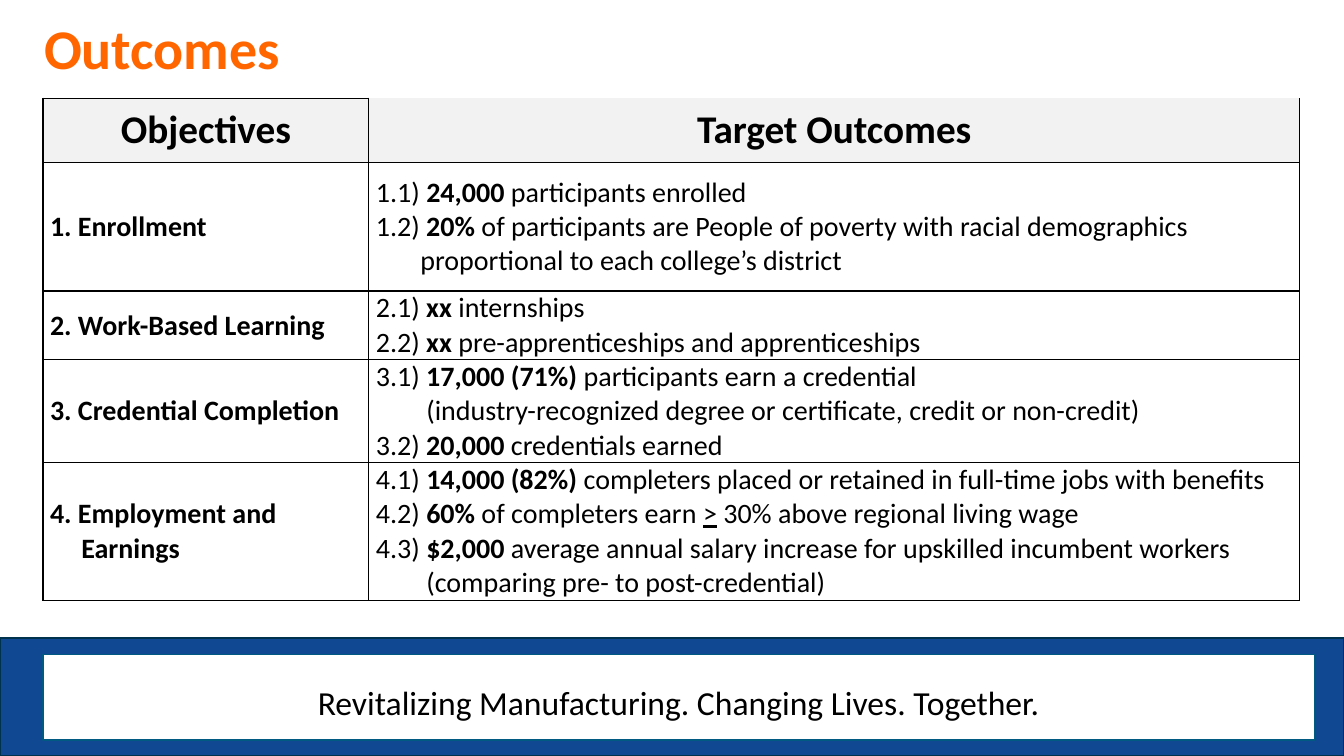
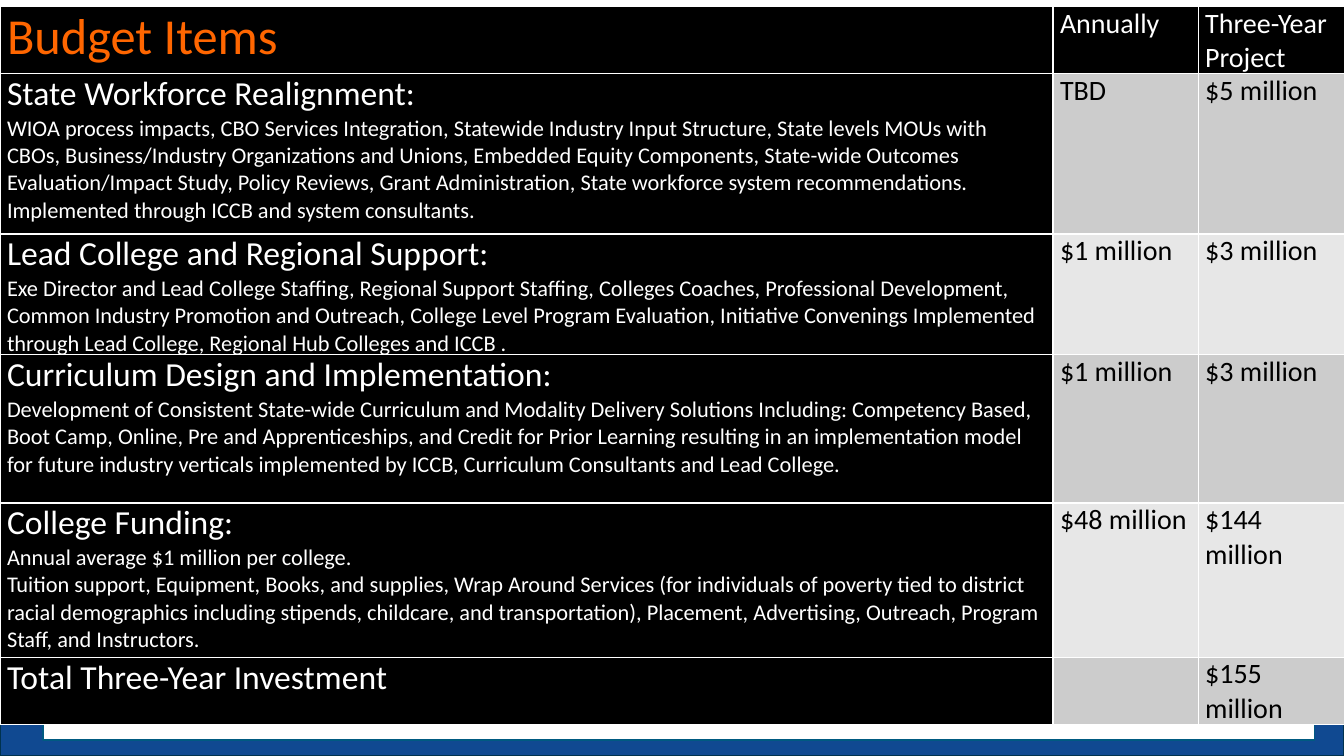
import dataclasses

import lxml.etree
import pptx
import pptx.dml.color
import pptx.enum.shapes
import pptx.enum.text
import pptx.oxml.ns
import pptx.util


@dataclasses.dataclass(frozen=True)
class Theme:
    font: str = "Calibri"
    black: str = "000000"
    white: str = "FFFFFF"
    orange: str = "FF6600"
    blue: str = "104991"
    band_line: str = "00324E"
    panel_line: str = "005A81"
    header_gray: str = "F2F2F2"
    row_grays: tuple = ("CCCCCC", "E7E7E7")
    title: int = 40
    budget_title: int = 36
    header: int = 28
    item: int = 24
    body: int = 20
    detail: int = 16


theme = Theme()
color = pptx.dml.color.RGBColor.from_string
anchor = pptx.enum.text.MSO_ANCHOR
center = pptx.enum.text.PP_ALIGN.CENTER

presentation = pptx.Presentation()
presentation.slide_width = pptx.util.Inches(13.33)
presentation.slide_height = pptx.util.Inches(7.5)

# Grid: 100 columns by 100 rows
column = presentation.slide_width / 100
row = presentation.slide_height / 100
margin = 3.2


def write(paragraph, runs, size, text_color, bold=False):
    """Write (text, style) runs; style b is bold, u is underlined."""
    for text, style in runs:
        run = paragraph.add_run()
        run.text = text
        run.font.name = theme.font
        run.font.size = pptx.util.Pt(size)
        run.font.color.rgb = color(text_color)
        run.font.bold = bold or style == "b"
        run.font.underline = style == "u"


def add_grid_table(slide, left, top, widths, heights, border_color):
    """Add a plain table with a one-point border on every cell side."""
    frame = slide.shapes.add_table(
        len(heights), len(widths), int(left * column), int(top * row),
        int(sum(widths) * column), int(sum(heights) * row))
    table = frame.table
    table.first_row = table.horz_banding = False
    for table_column, width in zip(table.columns, widths):
        table_column.width = int(width * column)
    for table_row, height in zip(table.rows, heights):
        table_row.height = int(height * row)
    qn = pptx.oxml.ns.qn
    for cell in table.iter_cells():
        cell.margin_left = cell.margin_right = pptx.util.Inches(0.07)
        cell.margin_top = cell.margin_bottom = 0
        properties = cell._tc.get_or_add_tcPr()
        for side in ("a:lnL", "a:lnR", "a:lnT", "a:lnB"):
            line = lxml.etree.SubElement(properties, qn(side), w="12700")
            fill = lxml.etree.SubElement(line, qn("a:solidFill"))
            lxml.etree.SubElement(fill, qn("a:srgbClr"), val=border_color)
        cell.fill.background()
    return table


# Shared footer: blue band, white panel, motto
footer_boxes = [
    (0, 84.4, 100, 15.6, theme.blue, theme.band_line),
    (margin, 86.6, 94.6, 11.3, theme.white, theme.panel_line),
]
slides = []
for _ in range(2):
    slide = presentation.slides.add_slide(presentation.slide_layouts[6])
    slides.append(slide)
    for left, top, width, height, fill_color, line_color in footer_boxes:
        shape = slide.shapes.add_shape(
            pptx.enum.shapes.MSO_SHAPE.RECTANGLE, int(left * column),
            int(top * row), int(width * column), int(height * row))
        shape.shadow.inherit = False
        shape.fill.solid()
        shape.fill.fore_color.rgb = color(fill_color)
        shape.line.color.rgb = color(line_color)
        shape.line.width = pptx.util.Pt(1)
    motto = slide.shapes.add_textbox(
        int(margin * column), int(89.5 * row),
        int(94.6 * column), int(6.7 * row))
    motto.text_frame.word_wrap = True
    paragraph = motto.text_frame.paragraphs[0]
    paragraph.alignment = center
    write(paragraph,
          [("Revitalizing Manufacturing. Changing Lives. Together.", "")],
          theme.item, theme.black)

outcomes_slide, budget_slide = slides

# Outcomes: title
title = outcomes_slide.shapes.add_textbox(
    int(2.55 * column), int(1.7 * row), int(78.8 * column), int(10.3 * row))
title.text_frame.word_wrap = True
title.text_frame.vertical_anchor = anchor.MIDDLE
paragraph = title.text_frame.paragraphs[0]
paragraph.line_spacing = 0.9
write(paragraph, [("Outcomes", "")], theme.title, theme.orange, bold=True)

# Outcomes: each line is (indent in inches, runs)
outcomes = [
    ([(0, [("1. Enrollment", "b")])],
     [(0, [("1.1) ", ""), ("24,000", "b"), (" participants enrolled", "")]),
      (0, [("1.2)", ""), (" 20%", "b"),
           (" of participants are People of poverty with racial demographics", "")]),
      (0.44, [("proportional to each college’s district", "")])]),
    ([(0, [("2. Work-Based Learning", "b")])],
     [(0, [("2.1)", ""), (" xx ", "b"), ("internships", "")]),
      (0, [("2.2)", ""), (" xx", "b"),
           (" pre-apprenticeships and apprenticeships", "")])]),
    ([(0, [("3. Credential Completion", "b")])],
     [(0, [("3.1)", ""), (" 17,000 (71%)", "b"),
           (" participants earn a credential", "")]),
      (0.5, [("(industry-recognized degree or certificate, credit or non-credit)", "")]),
      (0, [("3.2)", ""), (" 20,000", "b"), (" credentials earned", "")])]),
    ([(0, [("4. Employment and", "b")]), (0.31, [("Earnings", "b")])],
     [(0, [("4.1) ", ""), ("14,000 (82%)", "b"),
           (" completers placed or retained in full-time jobs with benefits", "")]),
      (0, [("4.2) ", ""), ("60%", "b"), (" of completers earn ", ""),
           (">", "u"), (" 30% above regional living wage", "")]),
      (0, [("4.3) ", ""), ("$2,000", "b"),
           (" average annual salary increase for upskilled incumbent workers", "")]),
      (0.5, [("(comparing pre- to post-credential)", "")])]),
]
table = add_grid_table(outcomes_slide, margin, 13, (24.25, 69.25),
                       (8.5, 17, 9.1, 13.6, 18.2), theme.black)
for index, heading in enumerate(("Objectives", "Target Outcomes")):
    cell = table.cell(0, index)
    cell.fill.solid()
    cell.fill.fore_color.rgb = color(theme.header_gray)
    paragraph = cell.text_frame.paragraphs[0]
    paragraph.alignment = center
    write(paragraph, [(heading, "")], theme.header, theme.black, bold=True)
for row_index, entry in enumerate(outcomes, start=1):
    for column_index, lines in enumerate(entry):
        text_frame = table.cell(row_index, column_index).text_frame
        for line_index, (indent, runs) in enumerate(lines):
            paragraph = (text_frame.add_paragraph() if line_index
                         else text_frame.paragraphs[0])
            if indent:
                paragraph._p.get_or_add_pPr().set(
                    "marL", str(pptx.util.Inches(indent)))
            write(paragraph, runs, theme.body, theme.black)
for cell in table.iter_cells():
    cell.vertical_anchor = anchor.MIDDLE

# The second heading is open at the top
top_line = table.cell(0, 1)._tc.tcPr.find(pptx.oxml.ns.qn("a:lnT"))
top_line.remove(top_line[0])
lxml.etree.SubElement(top_line, pptx.oxml.ns.qn("a:noFill"))

# Budget: (item, details, annual amount, three-year amount)
budget = [
    ("State Workforce Realignment:",
     ["WIOA process impacts, CBO Services Integration, Statewide Industry Input "
      "Structure, State levels MOUs with CBOs, Business/Industry Organizations and "
      "Unions, Embedded Equity Components, State-wide Outcomes Evaluation/Impact "
      "Study, Policy Reviews, Grant Administration, State workforce system "
      "recommendations.",
      "Implemented through ICCB and system consultants."],
     "TBD", "$5 million"),
    ("Lead College and Regional Support:",
     ["Exe Director and Lead College Staffing, Regional Support Staffing, Colleges "
      "Coaches, Professional Development, Common Industry Promotion and Outreach, "
      "College Level Program Evaluation, Initiative Convenings Implemented through "
      "Lead College, Regional Hub Colleges and ICCB ."],
     "$1 million", "$3 million"),
    ("Curriculum Design and Implementation:",
     ["Development of Consistent State-wide Curriculum and Modality Delivery "
      "Solutions Including: Competency Based, Boot Camp, Online, Pre and "
      "Apprenticeships, and Credit for Prior Learning resulting in an implementation "
      "model for future industry verticals implemented by ICCB, Curriculum "
      "Consultants and Lead College."],
     "$1 million", "$3 million"),
    ("College Funding:",
     ["Annual average $1 million per college.",
      "Tuition support, Equipment, Books, and supplies, Wrap Around Services (for "
      "individuals of poverty tied to district racial demographics including "
      "stipends, childcare, and transportation), Placement, Advertising, Outreach, "
      "Program Staff, and Instructors."],
     "$48 million", "$144 million"),
    ("Total Three-Year Investment", [], "", "$155 million"),
]
table = add_grid_table(budget_slide, 0, 0.85, (78.35, 10.8, 11),
                       (8.8, 21.2, 15.9, 19.6, 20.4, 8.9), theme.white)
headings = [
    ("Budget Items", theme.budget_title, theme.orange),
    ("Annually", theme.body, theme.white),
    ("Three-Year Project", theme.body, theme.white),
]
for index, (heading, size, text_color) in enumerate(headings):
    write(table.cell(0, index).text_frame.paragraphs[0], [(heading, "")],
          size, text_color)
for row_index, (item, details, *amounts) in enumerate(budget, start=1):
    text_frame = table.cell(row_index, 0).text_frame
    write(text_frame.paragraphs[0], [(item, "")], theme.item, theme.white)
    for detail in details:
        write(text_frame.add_paragraph(), [(detail, "")],
              theme.detail, theme.white)
    for column_index, amount in enumerate(amounts, start=1):
        if amount:
            write(table.cell(row_index, column_index).text_frame.paragraphs[0],
                  [(amount, "")], theme.body, theme.black)

# Budget: black headings and items, alternating gray amounts
for row_index in range(len(table.rows)):
    for column_index in range(len(table.columns)):
        is_amount = row_index > 0 and column_index > 0
        cell = table.cell(row_index, column_index)
        cell.fill.solid()
        cell.fill.fore_color.rgb = color(
            theme.row_grays[(row_index - 1) % 2] if is_amount else theme.black)

presentation.save("out.pptx")
